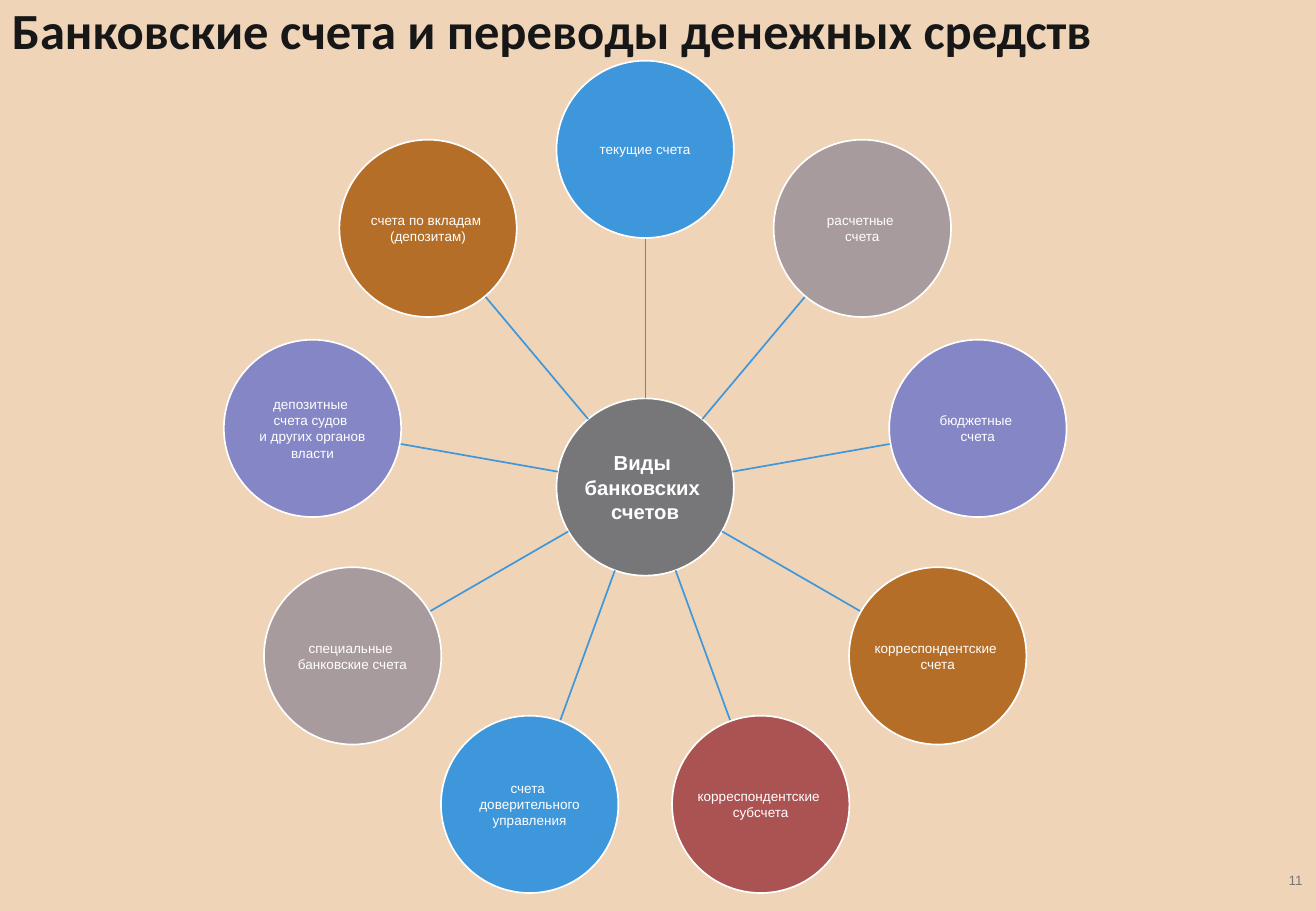
from math import cos, radians, sin

from lxml.etree import SubElement
from pptx import Presentation
from pptx.dml.color import RGBColor
from pptx.enum.shapes import MSO_CONNECTOR, MSO_SHAPE
from pptx.enum.text import MSO_ANCHOR, PP_ALIGN
from pptx.oxml.ns import qn
from pptx.util import Inches, Pt

TITLE = "Банковские счета и переводы денежных средств"
PAGE_NUMBER = "11"
HUB = ["Виды ", "банковских ", "счетов"]
ACCOUNTS = [
    (["текущие счета"], "3E96DB"),
    (["расчетные ", "счета"], "A89B9D"),
    (["бюджетные ", "счета"], "8586C6"),
    (["корреспондентские ", "счета"], "B46E28"),
    (["корреспондентские ", "субсчета"], "AB5253"),
    (["счета ", "доверительного", "управления"], "3E96DB"),
    (["специальные ", "банковские счета"], "A89B9D"),
    (["депозитные ", "счета судов ", "и других органов", "власти"], "8586C6"),
    (["счета по вкладам ", "(депозитам)"], "B46E28"),
]
BACKGROUND, WHITE, GREY, DARK = "EFD4B8", "FFFFFF", "77777A", "181717"
FIRST_SPOKE, SPOKE = ("8C7D6F", 0.75), ("3E96DB", 1)
CENTER_X, CENTER_Y = 5.31, 4.01
ORBIT, RADIUS = 2.78, 0.73


def color(value):
    return RGBColor.from_string(value)


def on_ray(angle, distance):
    return CENTER_X + distance * sin(angle), CENTER_Y - distance * cos(angle)


def write(frame, lines, size, ink, align, font="Arial", bold=False, inset=0.01):
    frame.margin_left = frame.margin_right = Inches(inset)
    frame.margin_top = frame.margin_bottom = Inches(min(inset, 0.05))
    for index, line in enumerate(lines):
        para = frame.add_paragraph() if index else frame.paragraphs[0]
        para.alignment = align
        span = para.add_run()
        span.text = line
        span.font.name, span.font.size, span.font.bold = font, Pt(size), bold
        span.font.color.rgb = color(ink)


def add_text(page, left, top, width, height, lines, **style):
    box = page.shapes.add_textbox(*map(Inches, (left, top, width, height)))
    box.text_frame.word_wrap = True
    write(box.text_frame, lines, **style)
    return box.text_frame


def add_circle(page, x, y, lines, fill, size, bold=False):
    circle = page.shapes.add_shape(
        MSO_SHAPE.OVAL, Inches(x - RADIUS), Inches(y - RADIUS),
        Inches(2 * RADIUS), Inches(2 * RADIUS))
    circle.shadow.inherit = False
    circle.fill.solid()
    circle.fill.fore_color.rgb = color(fill)
    circle.line.color.rgb = color(WHITE)
    circle.line.width = Pt(1)
    circle.text_frame.word_wrap = False
    circle.text_frame.vertical_anchor = MSO_ANCHOR.MIDDLE
    write(circle.text_frame, lines, size, WHITE, PP_ALIGN.CENTER, bold=bold)


def add_spoke(page, angle, ink, width):
    ends = on_ray(angle, RADIUS) + on_ray(angle, ORBIT - RADIUS)
    spoke = page.shapes.add_connector(MSO_CONNECTOR.STRAIGHT, *map(Inches, ends))
    spoke.line.color.rgb = color(ink)
    spoke.line.width = Pt(width)
    SubElement(spoke.element.spPr, qn("a:effectLst"))


def main():
    """Build the wheel of bank account types."""
    deck = Presentation()
    deck.slide_width, deck.slide_height = Inches(10.83), Inches(7.5)
    page = deck.slides.add_slide(deck.slide_layouts[6])
    page.background.fill.solid()
    page.background.fill.fore_color.rgb = color(BACKGROUND)

    title = add_text(page, 0, 0, 10.83, 0.57, [TITLE], size=30, ink=DARK,
                     align=PP_ALIGN.LEFT, font="Calibri", bold=True, inset=0.1)
    title.paragraphs[0].line_spacing = 0.9

    add_circle(page, CENTER_X, CENTER_Y, HUB, GREY, 12, bold=True)
    for index, (lines, fill) in enumerate(ACCOUNTS):
        angle = radians(360 / len(ACCOUNTS) * index)
        add_spoke(page, angle, *(SPOKE if index else FIRST_SPOKE))
        add_circle(page, *on_ray(angle, ORBIT), lines, fill, 8)

    number = add_text(page, 10.29, 6.99, 0.43, 0.51, [PAGE_NUMBER], size=8,
                      ink=GREY, align=PP_ALIGN.RIGHT, inset=0)
    number.vertical_anchor = MSO_ANCHOR.MIDDLE
    deck.save("out.pptx")


if __name__ == "__main__":
    main()
